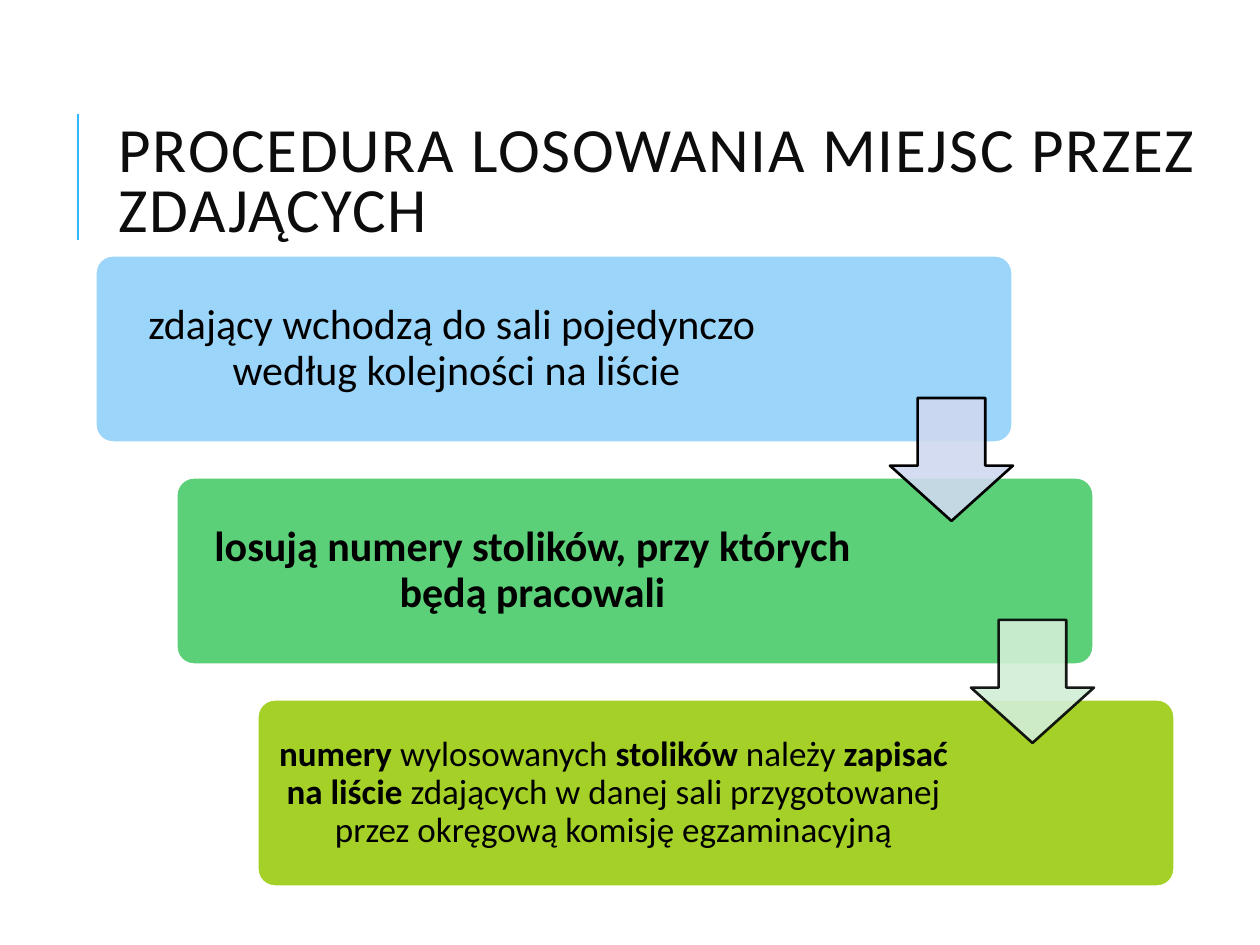
from lxml import etree
from pptx import Presentation, util as u
from pptx.dml.color import RGBColor
from pptx.enum import shapes, text
from pptx.oxml.ns import qn

COLORS = {"title": "0D0D0D", "text": "000000", "rule": "31B6FD", "edge": "FFFFFF"}
FONT = "Calibri"
TITLE = "PROCEDURA LOSOWANIA MIEJSC PRZEZ ZDAJĄCYCH"
STEPS = [
    {"fill": "9BD5FA", "size": 24, "inset": 13, "width": 713, "lines": [
        [("zdający wchodzą do sali pojedynczo ", False)],
        [("według kolejności na liście", False)]]},
    {"fill": "5BD078", "size": 24, "inset": 13, "width": 703, "lines": [
        [("losują numery stolików, przy których będą pracowali", True)]]},
    {"fill": "A5D028", "size": 20, "inset": 10, "width": 703, "lines": [
        [("numery ", True), ("wylosowanych", False), (" stolików", True),
         (" należy ", False), ("zapisać na liście ", True),
         ("zdających w danej sali przygotowanej przez okręgową komisję egzaminacyjną", False)]]},
]
ARROWS = [{"fill": "CFD9EF", "line_alpha": 100}, {"fill": "D2EED6", "line_alpha": 90}]

STEP_X, STEP_Y = 81, 222
CARD = (94, 254, 920, 190)
ARROW = (890, 398, 123, 123)
PAD = 6


def px(n):
    return u.Emu(round(n * 914400 / 126))


def rgb(value):
    return RGBColor.from_string(value)


def place(box, i):
    x, y, w, h = box
    return [px(n) for n in (x + i * STEP_X, y + i * STEP_Y, w, h)]


def add_run(p, content, size, color, bold=False):
    r = p.add_run()
    r.text = content
    r.font.name, r.font.size, r.font.bold = FONT, u.Pt(size), bold
    r.font.color.rgb = rgb(color)
    return r


def set_alpha(sp, tag, percent):
    clr = sp._element.spPr.find(f"{tag}/{qn('a:srgbClr')}")
    etree.SubElement(clr, qn("a:alpha")).set("val", str(percent * 1000))


def add_shape(s, kind, box, i, adjustments, fill, line, width):
    sp = s.shapes.add_shape(kind, *place(box, i))
    sp.shadow.inherit = False
    for k, value in enumerate(adjustments):
        sp.adjustments[k] = value
    sp.fill.solid()
    sp.fill.fore_color.rgb = rgb(fill)
    sp.line.color.rgb = rgb(line)
    sp.line.width = u.Pt(width)
    return sp


def add_title(s):
    rule = s.shapes.add_connector(shapes.MSO_CONNECTOR.STRAIGHT, px(78), px(240), px(78), px(114))
    rule.line.color.rgb = rgb(COLORS["rule"])
    rule.line.width = u.Pt(1.5)
    etree.SubElement(rule._element.spPr, qn("a:effectLst"))
    sp = s.shapes.title
    sp.left, sp.top, sp.width, sp.height = (px(n) for n in (106, 81, 1139, 207))
    tf = sp.text_frame
    tf.auto_size = text.MSO_AUTO_SIZE.NONE
    tf.vertical_anchor = text.MSO_ANCHOR.MIDDLE
    p = tf.paragraphs[0]
    p.alignment, p.line_spacing = text.PP_ALIGN.LEFT, 0.8
    r = add_run(p, TITLE, 36, COLORS["title"])
    r.font._element.set("spc", "100")


def add_step(s, i, step):
    add_shape(s, shapes.MSO_SHAPE.ROUNDED_RECTANGLE, CARD, i, [0.1],
              step["fill"], COLORS["edge"], 3)
    x, y, w, h = CARD
    box = (x + PAD, y + PAD, step["width"], h - 2 * PAD)
    tf = s.shapes.add_textbox(*place(box, i)).text_frame
    tf.word_wrap = True
    tf.vertical_anchor = text.MSO_ANCHOR.MIDDLE
    tf.margin_left = tf.margin_right = tf.margin_top = tf.margin_bottom = px(step["inset"])
    p = tf.paragraphs[0]
    p.alignment, p.line_spacing = text.PP_ALIGN.CENTER, 0.9
    for k, line in enumerate(step["lines"]):
        if k:
            p.add_line_break()
        for content, bold in line:
            add_run(p, content, step["size"], COLORS["text"], bold)


def add_arrow(s, i, arrow):
    sp = add_shape(s, shapes.MSO_SHAPE.DOWN_ARROW, ARROW, i, [0.55, 0.45],
                   arrow["fill"], COLORS["text"], 1.5)
    set_alpha(sp, qn("a:solidFill"), 90)
    set_alpha(sp, f"{qn('a:ln')}/{qn('a:solidFill')}", arrow["line_alpha"])


def main():
    prs = Presentation()
    prs.slide_width, prs.slide_height = px(1260), px(945)
    s = prs.slides.add_slide(prs.slide_layouts[5])
    add_title(s)
    for i, step in enumerate(STEPS):
        add_step(s, i, step)
    for i, arrow in enumerate(ARROWS):
        add_arrow(s, i, arrow)
    prs.save("out.pptx")


if __name__ == "__main__":
    main()
